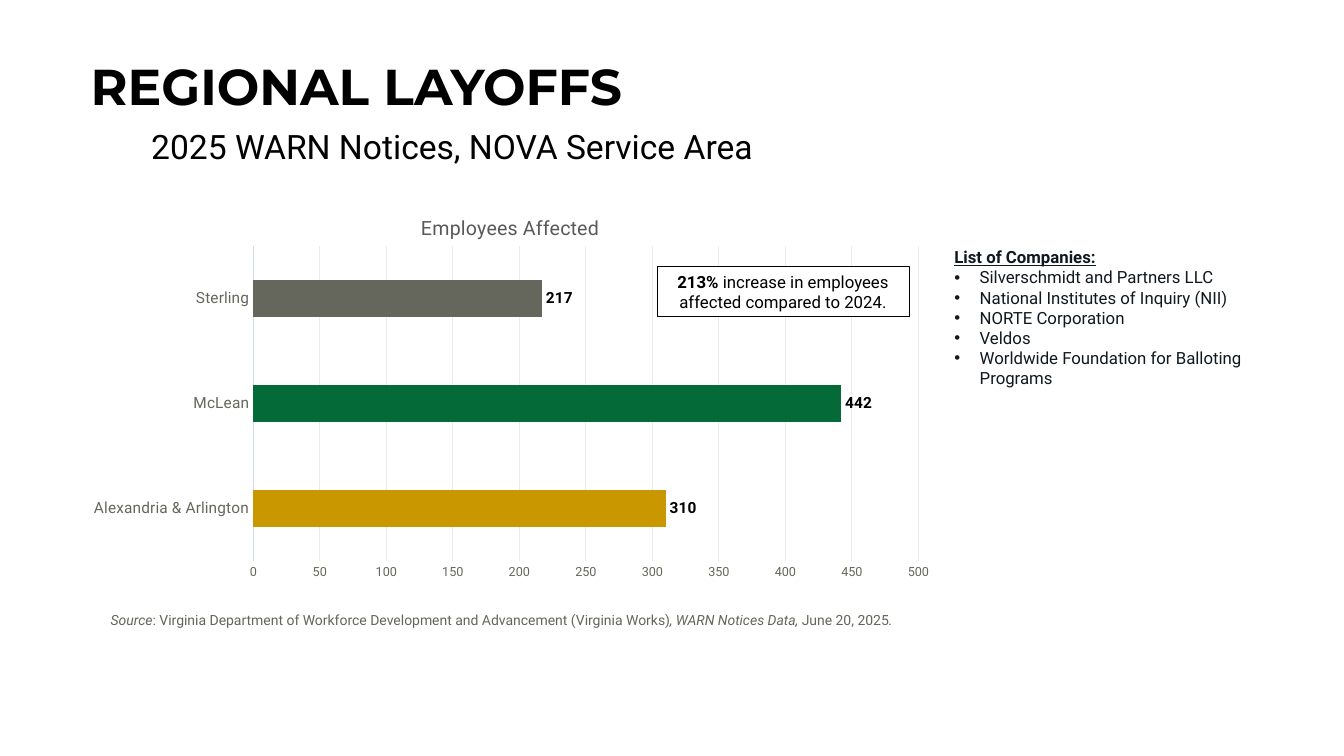
from pptx import Presentation
from pptx.chart.data import CategoryChartData
from pptx.dml.color import RGBColor
from pptx.enum.chart import XL_CHART_TYPE, XL_LABEL_POSITION, XL_TICK_MARK
from pptx.enum.shapes import MSO_SHAPE
from pptx.enum.text import MSO_ANCHOR, PP_ALIGN
from pptx.oxml import parse_xml
from pptx.oxml.ns import nsdecls
from pptx.util import Cm, Pt

BAR = XL_CHART_TYPE.BAR_CLUSTERED
OUTSIDE_END = XL_LABEL_POSITION.OUTSIDE_END
NO_TICK = XL_TICK_MARK.NONE
RECTANGLE = MSO_SHAPE.RECTANGLE
TOP, MIDDLE, BOTTOM = MSO_ANCHOR.TOP, MSO_ANCHOR.MIDDLE, MSO_ANCHOR.BOTTOM
LEFT, CENTER = PP_ALIGN.LEFT, PP_ALIGN.CENTER

COLORS = {
    "black": "000000", "white": "FFFFFF", "ink": "101820", "gray": "65665C",
    "source": "64655C", "heading": "595959", "axis": "D1DCE8", "grid": "EBEBEB",
    "gold": "C99700", "green": "046A38", "teal": "004E59",
}
EMPLOYEES = [
    ("Alexandria & Arlington", 310, "gold"),
    ("McLean", 442, "green"),
    ("Sterling", 217, "gray"),
]
COMPANIES = [
    "Silverschmidt and Partners LLC",
    "National Institutes of Inquiry (NII)",
    "NORTE Corporation",
    "Veldos",
    "Worldwide Foundation for Balloting Programs",
]


def color(name):
    """Return the named colour."""
    return RGBColor.from_string(COLORS[name])


def set_font(font, size, tint, **values):
    """Apply size, colour and further values to a font."""
    values = {"name": "Roboto", "size": Pt(size), "bold": False, **values}
    for key, value in values.items():
        setattr(font, key, value)
    font.color.rgb = color(tint)


def set_line(line, tint):
    """Give a line its colour and the common width."""
    line.color.rgb = color(tint)
    line.width = Pt(0.75)


def write_runs(paragraph, runs, size, tint):
    """Add runs given as pairs of text and font values."""
    for text, values in runs:
        run = paragraph.add_run()
        run.text = text
        set_font(run.font, size, tint, **values)


def format_frame(shape, anchor=TOP):
    """Wrap and anchor the text of a shape and return its frame."""
    frame = shape.text_frame
    frame.word_wrap = True
    frame.vertical_anchor = anchor
    return frame


def add_text(slide, box, runs, size, tint, anchor=TOP):
    """Add a one-paragraph text box."""
    frame = format_frame(slide.shapes.add_textbox(*map(Cm, box)), anchor)
    write_runs(frame.paragraphs[0], runs, size, tint)


def add_heading(slide, box):
    """Place the title and the subtitle below it."""
    left, top, width, height = box
    title = slide.shapes.title
    for key, value in zip(("left", "top", "width", "height"), box):
        setattr(title, key, Cm(value))
    paragraph = format_frame(title, BOTTOM).paragraphs[0]
    paragraph.alignment = LEFT
    write_runs(paragraph, [("REGIONAL LAYOFFS", {"name": "Montserrat", "bold": True})],
               36, "black")
    subtitle_box = (left + 1.53, top + height, width + 1, 1.27)
    add_text(slide, subtitle_box, [("2025 WARN Notices, NOVA Service Area", {})],
             24, "black", BOTTOM)


def manual_layout(target="", **fractions):
    """Build a chart layout from fractions of the chart area."""
    inner = f'<c:layoutTarget val="{target}"/>' if target else ""
    modes = "".join(f'<c:{key}Mode val="edge"/>' for key in ("x", "y"))
    places = "".join(f'<c:{key} val="{value}"/>' for key, value in fractions.items())
    return parse_xml(f'<c:layout {nsdecls("c")}><c:manualLayout>{inner}{modes}{places}'
                     '</c:manualLayout></c:layout>')


def place_layout(parent, layout, index):
    """Replace the layout of a chart part."""
    for old in parent.findall(layout.tag):
        parent.remove(old)
    parent.insert(index, layout)


def format_axes(chart):
    """Format the category and value axes."""
    category, value = chart.category_axis, chart.value_axis
    for axis, size in ((category, 11), (value, 9)):
        axis.major_tick_mark = axis.minor_tick_mark = NO_TICK
        set_font(axis.tick_labels.font, size, "gray")
    category.has_major_gridlines = False
    set_line(category.format.line, "axis")
    value.minimum_scale, value.maximum_scale, value.major_unit = 0, 500, 50
    value.format.line.fill.background()
    set_line(value.major_gridlines.format.line, "grid")


def add_employee_chart(slide, box):
    """Add the bar chart and the callout over its upper right part."""
    data = CategoryChartData()
    data.categories = [place for place, _, _ in EMPLOYEES]
    data.add_series("Series 1", [count for _, count, _ in EMPLOYEES])
    chart = slide.shapes.add_chart(BAR, *map(Cm, box), data).chart
    chart.has_legend = False
    set_font(chart.font, 10, "ink", name="Cambria")
    chart.has_title = True
    title = chart.chart_title
    write_runs(title.text_frame.paragraphs[0], [("Employees Affected", {})], 14, "heading")
    title.include_in_layout = False
    place_layout(title._element, manual_layout(x=0.39, y=0.05), 1)
    format_axes(chart)

    plot = chart.plots[0]
    plot.gap_width = 182
    plot.vary_by_categories = False
    series = plot.series[0]
    series.format.fill.solid()
    series.format.fill.fore_color.rgb = color("teal")
    for index, (_, _, tint) in enumerate(EMPLOYEES):
        fill = series.points[index].format.fill
        fill.solid()
        fill.fore_color.rgb = color(tint)
    labels = series.data_labels
    labels.show_value = True
    labels.position = OUTSIDE_END
    set_font(labels.font, 11, "black", bold=True)
    plot_area = chart._chartSpace.chart.plotArea
    place_layout(plot_area, manual_layout("inner", x=0.2, y=0.14, w=0.77, h=0.79), 0)

    left, top, _, _ = box
    add_callout(slide, (left + 14.53, top + 1.91, 6.35, 1.27))


def add_callout(slide, box):
    """Add the framed note on the yearly increase."""
    callout = slide.shapes.add_shape(RECTANGLE, *map(Cm, box))
    callout.shadow.inherit = False
    callout.fill.solid()
    callout.fill.fore_color.rgb = color("white")
    set_line(callout.line, "black")
    paragraph = format_frame(callout, MIDDLE).paragraphs[0]
    paragraph.alignment = CENTER
    runs = [("213% ", {"bold": True}),
            ("increase in employees affected compared to 2024.", {})]
    write_runs(paragraph, runs, 12, "black")


def add_company_list(slide, box):
    """Add the underlined heading and the bulleted companies."""
    frame = format_frame(slide.shapes.add_textbox(*map(Cm, box)))
    heading = [("List of Companies:", {"bold": True, "underline": True})]
    write_runs(frame.paragraphs[0], heading, 12, "ink")
    for company in COMPANIES:
        paragraph = frame.add_paragraph()
        properties = paragraph._p.get_or_add_pPr()
        properties.set("marL", str(Cm(0.64)))
        properties.set("indent", str(-Cm(0.64)))
        properties.append(parse_xml(f'<a:buFont {nsdecls("a")} typeface="Arial"/>'))
        properties.append(parse_xml(f'<a:buChar {nsdecls("a")} char="•"/>'))
        write_runs(paragraph, [(company, {})], 12, "ink")


def add_source(slide, box):
    """Add the source line."""
    italic = {"italic": True}
    runs = [
        ("Source", italic),
        (": Virginia Department of Workforce Development and Advancement (Virginia Works)", {}),
        (", WARN Notices Data, ", italic),
        ("June 20, 2025", {}),
        (".", italic),
    ]
    add_text(slide, box, runs, 10, "source")


def main():
    """Build and save the presentation."""
    presentation = Presentation()
    presentation.slide_width, presentation.slide_height = Cm(33.87), Cm(19.05)
    slide = presentation.slides.add_slide(presentation.slide_layouts[5])
    add_heading(slide, (2.03, 1.27, 26.92, 1.78))
    add_source(slide, (2.54, 15.29, 20.62, 0.69))
    add_employee_chart(slide, (2.03, 4.8, 21.77, 10.03))
    add_company_list(slide, (23.8, 6.1, 9.35, 3.84))
    presentation.save("out.pptx")


if __name__ == "__main__":
    main()
